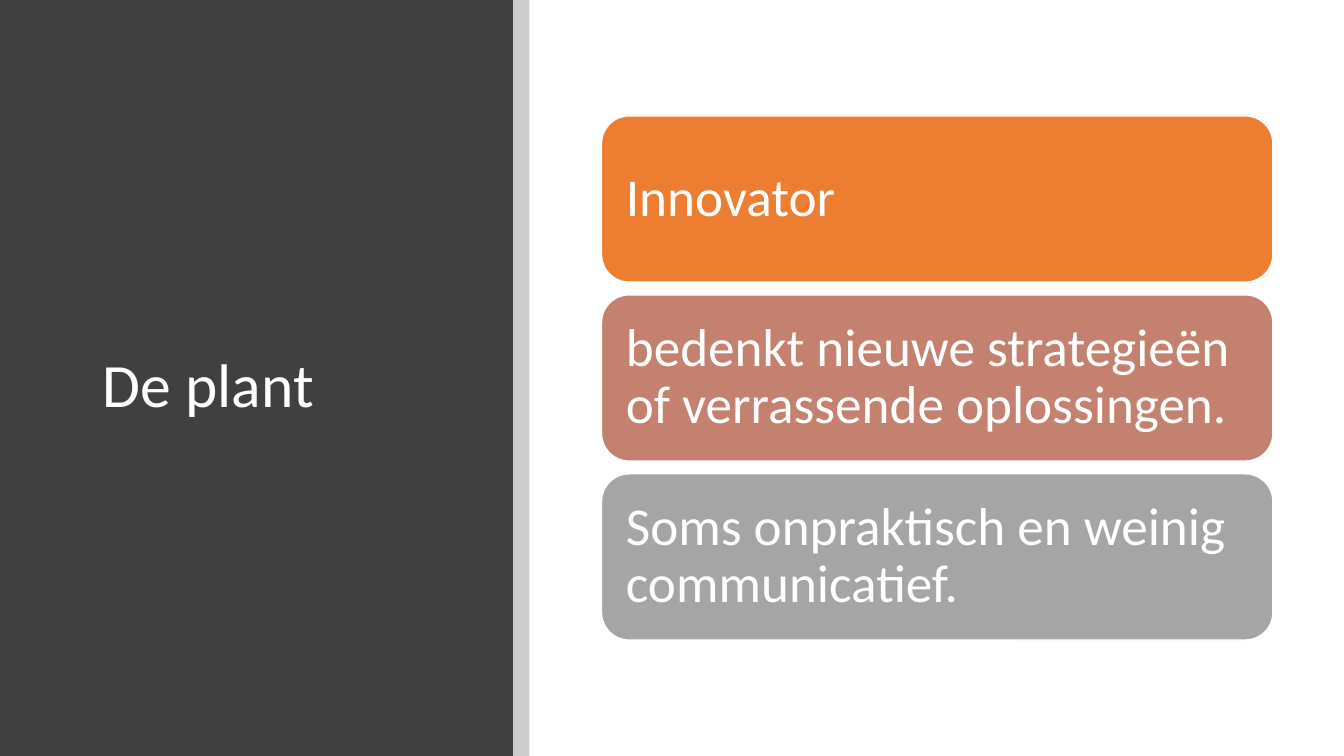
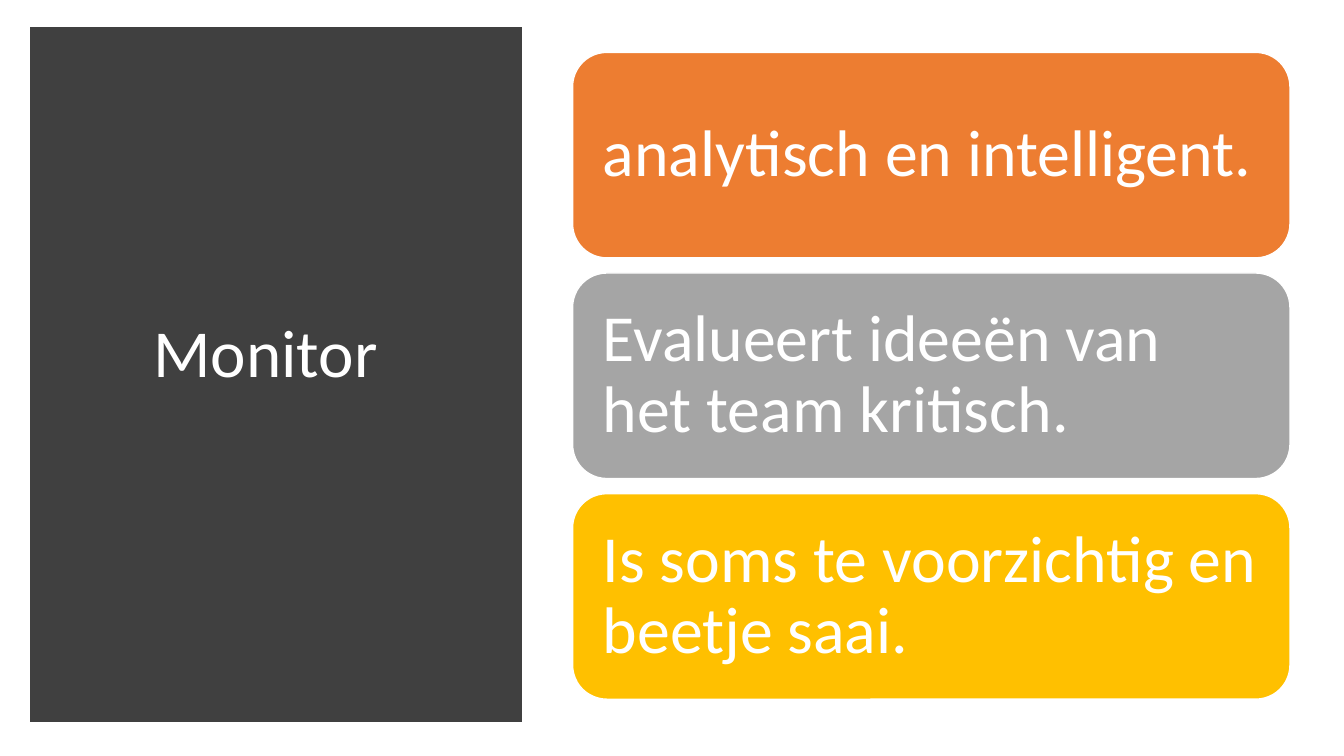
import pptx
import pptx.dml.color
import pptx.enum.shapes
import pptx.enum.text
import pptx.util
from lxml import etree

Cm, Pt = pptx.util.Cm, pptx.util.Pt
SHAPE = pptx.enum.shapes.MSO_SHAPE
ALIGN = pptx.enum.text.PP_ALIGN
DRAWING = "{http://schemas.openxmlformats.org/drawingml/2006/main}"

WIDTH, HEIGHT = 33.87, 19.05
FONT = "Calibri"
WHITE, BLACK, DARK = "FFFFFF", "000000", "404040"
ORANGE, ROSE, GREY, YELLOW = "ED7D31", "C48170", "A5A5A5", "FFC000"


def paint(color_format, color):
    color_format.rgb = pptx.dml.color.RGBColor.from_string(color)


def add_block(page, kind, box, color):
    """Add a plain filled shape without line or shadow; box is in centimetres."""
    block = page.shapes.add_shape(kind, *map(Cm, box))
    block.shadow.inherit = False
    block.fill.solid()
    paint(block.fill.fore_color, color)
    block.line.fill.background()
    return block


def outline(block, color, width):
    block.line.fill.solid()
    paint(block.line.color, color)
    block.line.width = Pt(width)


def write(frame, text, size, align):
    frame.word_wrap = True
    frame.auto_size = pptx.enum.text.MSO_AUTO_SIZE.NONE
    frame.vertical_anchor = pptx.enum.text.MSO_ANCHOR.MIDDLE
    frame.text = text
    para = frame.paragraphs[0]
    para.alignment = align
    para.line_spacing = 0.9
    para.font.name = FONT
    para.font.size = Pt(size)
    paint(para.font.color, WHITE)


def add_title_panel(page, box, title_box, text, size, align):
    """Put the title on a dark panel and return the panel."""
    title = page.shapes.title
    title.left, title.top, title.width, title.height = map(Cm, title_box)
    write(title.text_frame, text, size, align)
    panel = add_block(page, SHAPE.RECTANGLE, box, DARK)
    title.element.addprevious(panel.element)
    return panel


def add_stripe(page, box):
    stripe = add_block(page, SHAPE.RECTANGLE, box, BLACK)
    color = next(stripe.element.iter(DRAWING + "srgbClr"))
    etree.SubElement(color, DRAWING + "alpha", val="20000")


def add_cards(page, box, cards, size, gap, inset):
    """Stack equal rounded cards so that they fill the box."""
    left, top, width, height = box
    card_height = (height - gap * (len(cards) - 1)) / len(cards)
    for index, (text, color) in enumerate(cards):
        card_top = top + index * (card_height + gap)
        card = add_block(page, SHAPE.ROUNDED_RECTANGLE,
                         (left, card_top, width, card_height), color)
        outline(card, WHITE, 1)
        frame = card.text_frame
        frame.margin_left = frame.margin_right = Cm(inset)
        frame.margin_top = frame.margin_bottom = Cm(inset)
        write(frame, text, size, ALIGN.LEFT)


def add_page(deck):
    return deck.slides.add_slide(deck.slide_layouts.get_by_name("Title Only"))


def build_plant(deck):
    page = add_page(deck)
    panel_width = 12.93
    add_title_panel(page, (0, 0, panel_width, HEIGHT),
                    (2.34, 2.26, 9.27, 15.01), "De plant", 44, ALIGN.LEFT)
    add_stripe(page, (panel_width, 0, 0.41, HEIGHT))
    add_cards(page, (15.16, 2.92, 16.92, 13.21), [
        ("Innovator", ORANGE),
        ("bedenkt nieuwe strategieën of verrassende oplossingen.", ROSE),
        ("Soms onpraktisch en weinig communicatief.", GREY),
    ], size=38, gap=0.32, inset=0.41)


def build_monitor(deck):
    page = add_page(deck)
    panel = add_title_panel(page, (0.94, 0.86, 12.04, 17.17),
                            (2.06, 2.06, 9.65, 13.79), "Monitor ", 48, ALIGN.CENTER)
    outline(panel, DARK, 10)
    line = next(panel.element.iter(DRAWING + "ln"))
    etree.SubElement(line, DRAWING + "miter", lim="800000")
    add_cards(page, (14.43, 1.32, 18.08, 16.3), [
        ("analytisch en intelligent.", ORANGE),
        ("Evalueert ideeën van het team kritisch.", GREY),
        ("Is soms te voorzichtig en beetje saai.", YELLOW),
    ], size=47, gap=0.38, inset=0.51)


def main():
    deck = pptx.Presentation()
    deck.slide_width, deck.slide_height = Cm(WIDTH), Cm(HEIGHT)
    build_plant(deck)
    build_monitor(deck)
    deck.save("out.pptx")


if __name__ == "__main__":
    main()
